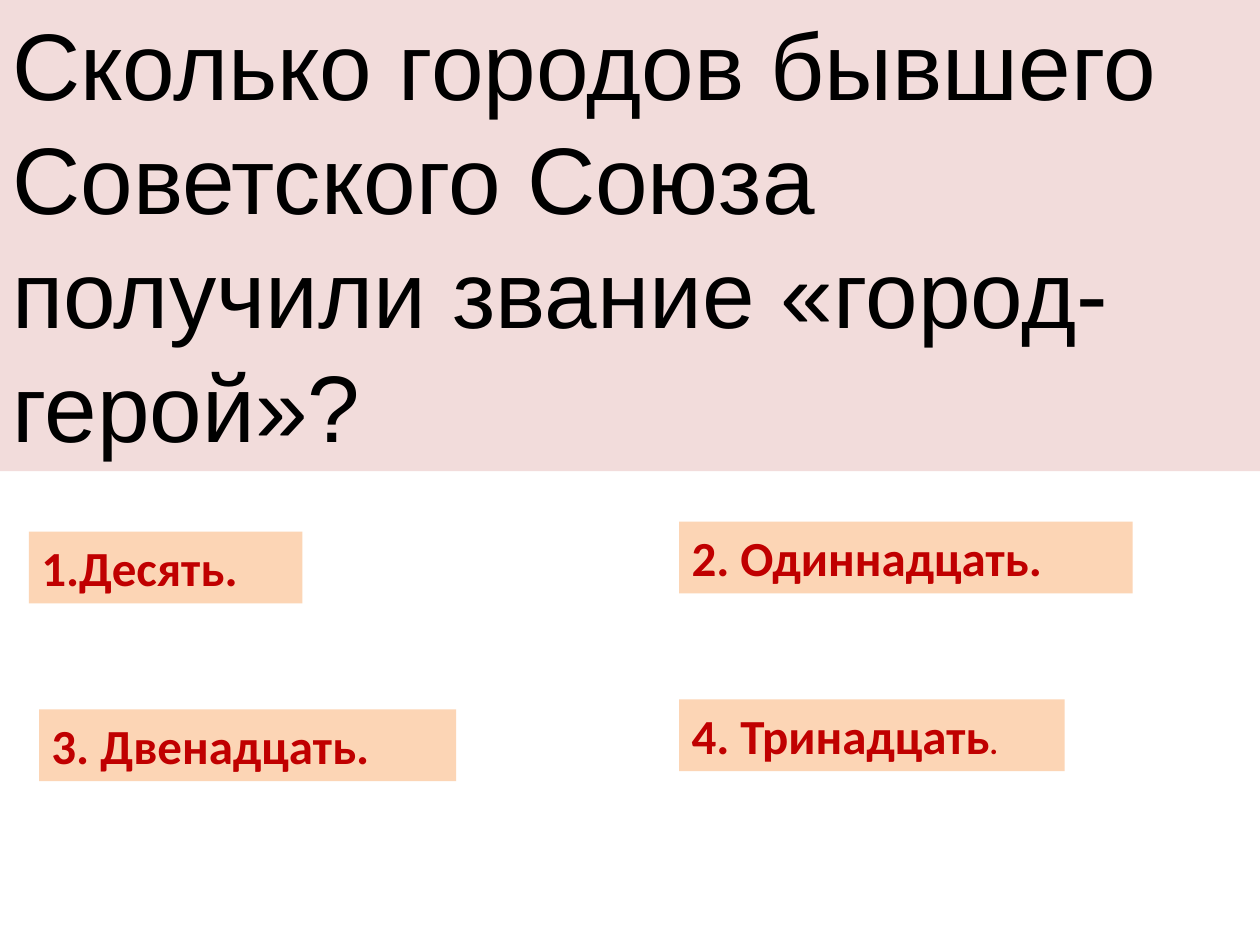
from pptx import Presentation
from pptx.dml.color import RGBColor
from pptx.enum.shapes import MSO_SHAPE as Shape
from pptx.enum.text import MSO_ANCHOR as Anchor, MSO_AUTO_SIZE as AutoSize, PP_ALIGN as Align
from pptx.util import Inches, Pt

QUESTION = "Сколько городов бывшего Советского Союза получили звание «город-герой»?"
ANSWER_HEIGHT = 0.57
RIGHT_COLUMN = 5.39
# Left, top, width and text of each answer
ANSWERS = [
    (0.23, 4.22, 2.17, "1.Десять."),
    (RIGHT_COLUMN, 4.14, 3.6, "2. Одиннадцать."),
    (0.31, 5.63, 3.31, "3. Двенадцать."),
    (RIGHT_COLUMN, 5.55, 3.06, "4. Тринадцать"),
]


def color(hex_value):
    return RGBColor.from_string(hex_value)


def style_run(run, font_name, size, hex_value, bold=False):
    run.font.name = font_name
    run.font.size = Pt(size)
    run.font.color.rgb = color(hex_value)
    run.font.bold = bold


def add_panel(slide, box, fill, text, wrap):
    """Place a filled text panel and return its only paragraph."""
    panel = slide.shapes.add_shape(Shape.RECTANGLE, *map(Inches, box))
    panel.shadow.inherit = False
    panel.fill.solid()
    panel.fill.fore_color.rgb = color(fill)
    panel.line.fill.background()
    frame = panel.text_frame
    frame.text = text
    frame.word_wrap = wrap
    frame.auto_size = AutoSize.SHAPE_TO_FIT_TEXT
    frame.vertical_anchor = Anchor.TOP
    paragraph = frame.paragraphs[0]
    paragraph.alignment = Align.LEFT
    return paragraph


def add_question(slide, box):
    question = add_panel(slide, box, "F2DCDB", QUESTION, wrap=True)
    question.line_spacing = Pt(65)
    style_run(question.runs[0], "Arial", 54, "000000")


def add_answer(slide, box, text):
    answer = add_panel(slide, box, "FCD5B5", text, wrap=False)
    style_run(answer.runs[0], "Calibri", 28, "C00000", bold=True)
    return answer


def main():
    deck = Presentation()
    deck.slide_width, deck.slide_height = Inches(10), Inches(7.5)
    slide = deck.slides.add_slide(deck.slide_layouts[6])

    # Question band
    add_question(slide, (0, 0, 10, 3.74))

    # Answer options
    for left, top, width, text in ANSWERS:
        answer = add_answer(slide, (left, top, width, ANSWER_HEIGHT), text)

    # The last answer ends with a smaller full stop
    full_stop = answer.add_run()
    full_stop.text = "."
    style_run(full_stop, "Calibri", 18, "C00000", bold=True)

    deck.save("out.pptx")


if __name__ == "__main__":
    main()
